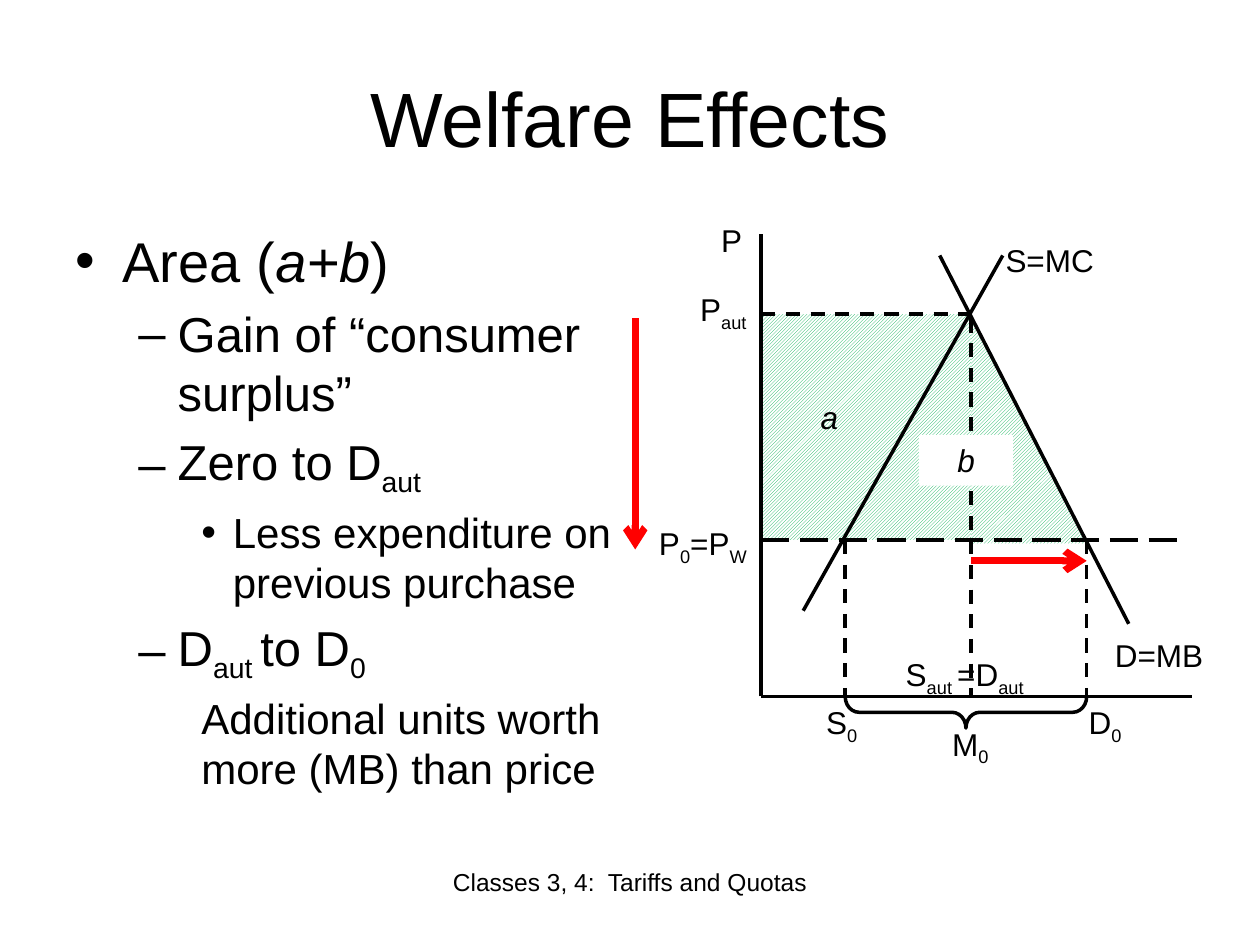
from dataclasses import dataclass

from lxml import etree
from pptx import Presentation
from pptx.dml.color import RGBColor
from pptx.enum.dml import MSO_LINE, MSO_PATTERN
from pptx.enum.shapes import MSO_CONNECTOR, MSO_SHAPE
from pptx.enum.text import MSO_ANCHOR, PP_ALIGN
from pptx.oxml.ns import qn
from pptx.util import Pt

STRAIGHT = MSO_CONNECTOR.STRAIGHT
DASH, LONG_DASH = MSO_LINE.DASH, MSO_LINE.LONG_DASH
HATCH = MSO_PATTERN.DARK_UPWARD_DIAGONAL
RECTANGLE, TRIANGLE, BRACE = MSO_SHAPE.RECTANGLE, MSO_SHAPE.RIGHT_TRIANGLE, MSO_SHAPE.LEFT_BRACE
LEFT, CENTER = PP_ALIGN.LEFT, PP_ALIGN.CENTER
TOP, MIDDLE = MSO_ANCHOR.TOP, MSO_ANCHOR.MIDDLE


@dataclass(frozen=True)
class Theme:
    font: str = "Arial"
    ink: RGBColor = RGBColor(0, 0, 0)
    paper: RGBColor = RGBColor(255, 255, 255)
    gain: RGBColor = RGBColor(0, 176, 80)
    change: RGBColor = RGBColor(255, 0, 0)
    title: int = 44
    levels: tuple = (32, 28, 24)
    label: int = 18
    footer: int = 14
    thin: int = 2
    thick: int = 4


def apply(target, values):
    for name, value in values.items():
        setattr(target, name, value)


class Painter:
    def __init__(self, page, theme):
        self.page = page
        self.theme = theme

    def spans(self, para, text, size, italic=False):
        for index, part in enumerate(text.split("|")):
            if not part:
                continue
            marked = index % 2 == 1
            span = para.add_run()
            span.text = part
            apply(span.font, {"name": self.theme.font, "size": Pt(size), "italic": marked and italic})
            span.font.color.rgb = self.theme.ink
            if marked and not italic:
                span._r.get_or_add_rPr().set("baseline", "-25000")

    def text(self, frame, text, size, align=LEFT, anchor=TOP, italic=False):
        apply(frame, {"word_wrap": True, "vertical_anchor": anchor})
        frame.paragraphs[0].alignment = align
        self.spans(frame.paragraphs[0], text, size, italic)

    def box(self, left, top, width, height):
        return self.page.shapes.add_textbox(Pt(left), Pt(top), Pt(width), Pt(height)).text_frame

    def outline(self, left, top, width, height, items):
        frame = self.box(left, top, width, height)
        frame.word_wrap = True
        for index, (level, bullet, margin, indent, text, italic) in enumerate(items):
            para = frame.add_paragraph() if index else frame.paragraphs[0]
            size = self.theme.levels[level]
            apply(para, {"level": level, "space_before": Pt(size * 0.2)})
            settings = para._p.get_or_add_pPr()
            settings.set("marL", str(Pt(margin)))
            settings.set("indent", str(Pt(indent)))
            if bullet:
                etree.SubElement(settings, qn("a:buFont")).set("typeface", self.theme.font)
                etree.SubElement(settings, qn("a:buChar")).set("char", bullet)
            self.spans(para, text, size, italic)

    def shape(self, kind, left, top, width, height):
        shape = self.page.shapes.add_shape(kind, Pt(left), Pt(top), Pt(width), Pt(height))
        shape.shadow.inherit = False
        shape.line.fill.background()
        return shape

    def area(self, kind, left, top, width, height):
        fill = self.shape(kind, left, top, width, height).fill
        fill.patterned()
        fill.pattern = HATCH
        fill.fore_color.rgb = self.theme.gain
        fill.back_color.rgb = self.theme.paper

    def tag(self, left, top, width, height, text):
        shape = self.shape(RECTANGLE, left, top, width, height)
        shape.fill.solid()
        shape.fill.fore_color.rgb = self.theme.paper
        self.text(shape.text_frame, text, self.theme.label, CENTER, italic=True)

    def brace(self, start, end, top, depth):
        length = end - start
        shape = self.shape(BRACE, (start + end - depth) / 2, top + (depth - length) / 2, depth, length)
        shape.rotation = 270
        shape.adjustments[0] = 0.44
        shape.fill.background()
        shape.line.color.rgb = self.theme.ink
        shape.line.width = Pt(self.theme.thin)

    def line(self, x1, y1, x2, y2, dash=None, arrow=False):
        line = self.page.shapes.add_connector(STRAIGHT, Pt(x1), Pt(y1), Pt(x2), Pt(y2))
        line.line.color.rgb = self.theme.change if arrow else self.theme.ink
        apply(line.line, {"width": Pt(self.theme.thick if arrow else self.theme.thin), "dash_style": dash})
        properties = line._element.spPr
        if arrow:
            etree.SubElement(properties.get_or_add_ln(), qn("a:tailEnd")).set("type", "arrow")
        etree.SubElement(properties, qn("a:effectLst"))


def main():
    deck = Presentation()
    apply(deck, {"slide_width": Pt(720), "slide_height": Pt(540)})
    theme = Theme()
    painter = Painter(deck.slides.add_slide(deck.slide_layouts[6]), theme)

    axis, base = 435, 398
    price_autarky, price_world = 179.5, 308.5
    supply_free, autarky, demand_free = 483, 555, 621

    painter.area(TRIANGLE, autarky, price_autarky, demand_free - autarky, 131)
    painter.area(RECTANGLE, axis + 1, price_autarky, autarky - axis - 1, price_world - price_autarky)

    painter.text(painter.box(36, 21.6, 648, 90), "Welfare Effects", theme.title, CENTER, MIDDLE)
    painter.outline(36, 126, 354, 356, [
        (0, "•", 27, -27, "Area (|a+b|)", True),
        (1, "–", 58.5, -22.5, "Gain of “consumer surplus”", False),
        (1, "–", 58.5, -22.5, "Zero to D|aut", False),
        (2, "•", 90, -18, "Less expenditure on previous purchase", False),
        (1, "–", 58.5, -22.5, "D|aut |to D|0", False),
        (2, None, 72, 0, "Additional units worth more (MB) than price", False),
    ])
    painter.text(painter.box(246, 492, 228, 37), "Classes 3, 4:  Tariffs and Quotas", theme.footer, CENTER)

    for ends in [
        (axis, base, 681, base),
        (axis, base, axis, 134),
        (645, 356.5, 537, 146),
        (459, 349, 573, 146),
        (axis, price_autarky, autarky, price_autarky, DASH),
        (axis, price_world, 675, price_world, LONG_DASH),
        (demand_free, price_world, demand_free, base, DASH),
        (supply_free, price_world, supply_free, base, DASH),
        (autarky, 182, autarky, base, DASH),
    ]:
        painter.line(*ends)
    painter.line(363, 182, 363, 314, arrow=True)
    painter.line(autarky, 320.5, demand_free, 320.5, arrow=True)
    painter.brace(supply_free, demand_free, base, 18)

    for left, top, width, text in [
        (405, 122.5, 54, "P"),
        (393, 162, 54, "P|aut"),
        (369.5, 296, 72, "P|0|=P|W"),
        (465, 398, 36, "S|0"),
        (615, 398, 36, "D|0"),
        (537, 410.5, 51, "M|0"),
        (510.5, 371, 102, "S|aut |=D|aut"),
        (567.5, 134, 73, "S=MC"),
        (630, 360, 76, "D=MB"),
    ]:
        painter.text(painter.box(left, top, width, 29), text, theme.label)
    painter.text(painter.box(447, 224, 54, 29), "|a", theme.label, CENTER, italic=True)
    painter.tag(525, 248.5, 54, 29, "|b")

    deck.save("out.pptx")


if __name__ == "__main__":
    main()
